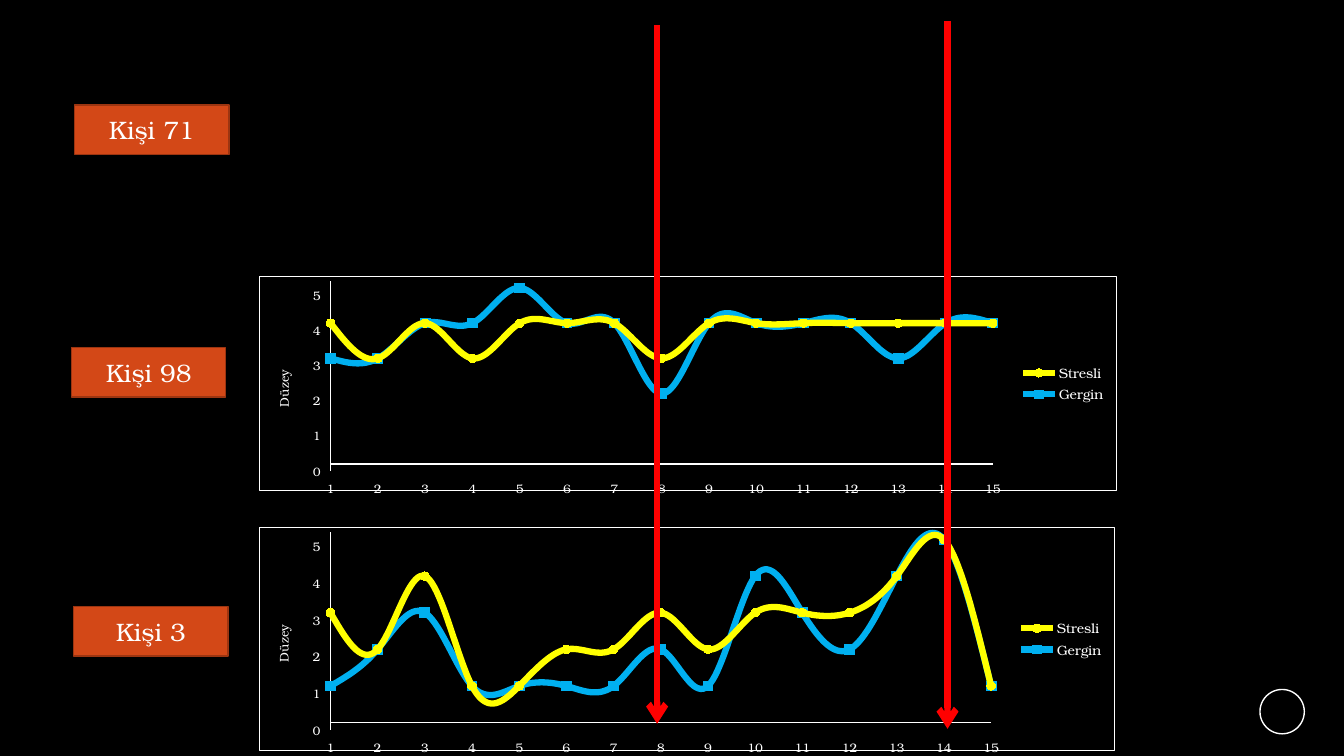
from lxml import etree
from pptx import Presentation
from pptx import util as u
from pptx.chart.data import XyChartData
from pptx.dml.color import RGBColor
from pptx.enum import chart as ch, shapes, text
from pptx.oxml import parse_xml
from pptx.oxml.ns import nsdecls, qn

BLACK = RGBColor(0x00, 0x00, 0x00)
WHITE = RGBColor(0xFF, 0xFF, 0xFF)
RED = RGBColor(0xFF, 0x00, 0x00)
ORANGE = RGBColor(0xD3, 0x48, 0x17)
BROWN = RGBColor(0x9C, 0x35, 0x11)
YELLOW = RGBColor(0xFF, 0xFF, 0x00)
BLUE = RGBColor(0x00, 0xB0, 0xF0)
FONT = "TeX Gyre Bonum"

AXIS_TITLE = "Düzey"
# name, line colour, marker style, marker size
SERIES = [
    ("Stresli", YELLOW, ch.XL_MARKER_STYLE.CIRCLE, 6),
    ("Gergin", BLUE, ch.XL_MARKER_STYLE.SQUARE, 7),
]
# top, width, height, one list of levels per series
CHARTS = [
    (197.3, 612.7, 157.7, [[4, 3, 4, 3, 4, 4, 4, 3, 4, 4, 4, 4, 4, 4, 4],
                           [3, 3, 4, 4, 5, 4, 4, 2, 4, 4, 4, 4, 3, 4, 4]]),
    (376.6, 611.3, 163.4, [[3, 2, 4, 1, 1, 2, 2, 3, 2, 3, 3, 3, 4, 5, 1],
                           [1, 2, 3, 1, 1, 1, 1, 2, 1, 4, 3, 2, 4, 5, 1]]),
]
CHART_LEFT = 185
PLOT_AREA = {"x": 0.083, "y": 0.02, "w": 0.773, "h": 0.89}
ARROWS = [(676.8, 15.1, 520.6), (469.4, 18, 517)]  # x, top, bottom
LABELS = [("Kişi 71", 53.3, 74.9), ("Kişi 98", 51.1, 248.4), ("Kişi 3", 52.6, 433.4)]
LABEL_SIZE = (110.2, 35.3)


def apply(target, **formats):
    for name, value in formats.items():
        setattr(target, name, value)


def style_font(font, size, color=WHITE):
    apply(font, name=FONT, size=u.Pt(size), bold=False)
    font.color.rgb = color


def style_line(line, color, width):
    line.color.rgb = color
    line.width = u.Pt(width)


def frame_chart(chart):
    """Give the chart area its black fill and white border, and fix the plot area."""
    chart_node = chart.element.find(qn("c:chart"))
    chart_node.addnext(parse_xml(
        f'<c:spPr {nsdecls("c", "a")}><a:solidFill><a:srgbClr val="{BLACK}"/></a:solidFill>'
        f'<a:ln w="{u.Pt(0.75)}"><a:solidFill><a:srgbClr val="{WHITE}"/></a:solidFill></a:ln></c:spPr>'))
    plot = chart_node.find(qn("c:plotArea"))
    for old in plot.findall(qn("c:layout")):
        plot.remove(old)
    modes = '<c:layoutTarget val="inner"/><c:xMode val="edge"/><c:yMode val="edge"/>'
    sizes = "".join(f'<c:{key} val="{value}"/>' for key, value in PLOT_AREA.items())
    plot.insert(0, parse_xml(
        f'<c:layout {nsdecls("c")}><c:manualLayout>{modes}{sizes}</c:manualLayout></c:layout>'))


def style_axis(axis, low, high):
    apply(axis, minimum_scale=low, maximum_scale=high, major_unit=1,
          major_tick_mark=ch.XL_TICK_MARK.NONE, minor_tick_mark=ch.XL_TICK_MARK.NONE,
          tick_label_position=ch.XL_TICK_LABEL_POSITION.LOW)
    apply(axis.tick_labels, number_format="0", number_format_is_linked=False)
    style_font(axis.tick_labels.font, 9)
    style_line(axis.format.line, WHITE, 1)


def add_level_chart(slide, top, width, height, levels):
    data = XyChartData()
    for (name, *_), values in zip(SERIES, levels):
        points = data.add_series(name)
        for day, value in enumerate(values, 1):
            points.add_data_point(day, value)
    chart = slide.shapes.add_chart(
        ch.XL_CHART_TYPE.XY_SCATTER_SMOOTH, u.Pt(CHART_LEFT), u.Pt(top),
        u.Pt(width), u.Pt(height), data).chart
    frame_chart(chart)
    style_font(chart.font, 10)
    apply(chart, has_title=False, has_legend=True)
    apply(chart.legend, position=ch.XL_LEGEND_POSITION.RIGHT, include_in_layout=False)
    style_font(chart.legend.font, 10)

    days, level = chart.category_axis, chart.value_axis
    style_axis(days, 1, 15)
    days.has_major_gridlines = False
    style_axis(level, -0.2, 5.2)
    level.has_major_gridlines = True
    style_line(level.major_gridlines.format.line, BLACK, 0.75)
    title = level.axis_title.text_frame
    title.text = AXIS_TITLE
    style_font(title.paragraphs[0].runs[0].font, 9)

    chart.plots[0].vary_by_categories = False
    for series, (_, color, marker, size) in zip(chart.plots[0].series, SERIES):
        series.format.line.width = u.Pt(4.5)
        series.format.line.color.rgb = color
        apply(series.marker, style=marker, size=size)
        series.marker.format.fill.solid()
        series.marker.format.fill.fore_color.rgb = color
        series.marker.format.line.color.rgb = color
        smooth = series._element.get_or_add_smooth()
        smooth.val = True


def add_arrow(slide, x, top, bottom):
    arrow = slide.shapes.add_connector(
        shapes.MSO_CONNECTOR.STRAIGHT, u.Pt(x), u.Pt(top), u.Pt(x), u.Pt(bottom))
    style_line(arrow.line, RED, 4.5)
    props = arrow._element.spPr
    etree.SubElement(props.find(qn("a:ln")), qn("a:tailEnd"), type="arrow")
    etree.SubElement(props, qn("a:effectLst"))


def add_label(slide, words, left, top):
    box = slide.shapes.add_shape(
        shapes.MSO_SHAPE.RECTANGLE, u.Pt(left), u.Pt(top), *map(u.Pt, LABEL_SIZE))
    box.shadow.inherit = False
    box.fill.solid()
    box.fill.fore_color.rgb = ORANGE
    style_line(box.line, BROWN, 1)
    box.text_frame.vertical_anchor = text.MSO_ANCHOR.MIDDLE
    para = box.text_frame.paragraphs[0]
    para.alignment = text.PP_ALIGN.CENTER
    span = para.add_run()
    span.text = words
    style_font(span.font, 18)


def add_number_ring(slide):
    ring = slide.shapes.add_shape(
        shapes.MSO_SHAPE.OVAL, u.Pt(900), u.Pt(492.5), u.Pt(31.7), u.Pt(31.7))
    ring.shadow.inherit = False
    ring.fill.background()
    style_line(ring.line, WHITE, 1)


def main():
    deck = Presentation()
    apply(deck, slide_width=u.Pt(960), slide_height=u.Pt(540))
    slide = deck.slides.add_slide(deck.slide_layouts.get_by_name("Blank"))
    slide.background.fill.solid()
    slide.background.fill.fore_color.rgb = BLACK
    add_number_ring(slide)
    for chart in CHARTS:
        add_level_chart(slide, *chart)
    for arrow in ARROWS:
        add_arrow(slide, *arrow)
    for label in LABELS:
        add_label(slide, *label)
    deck.save("out.pptx")


if __name__ == "__main__":
    main()
